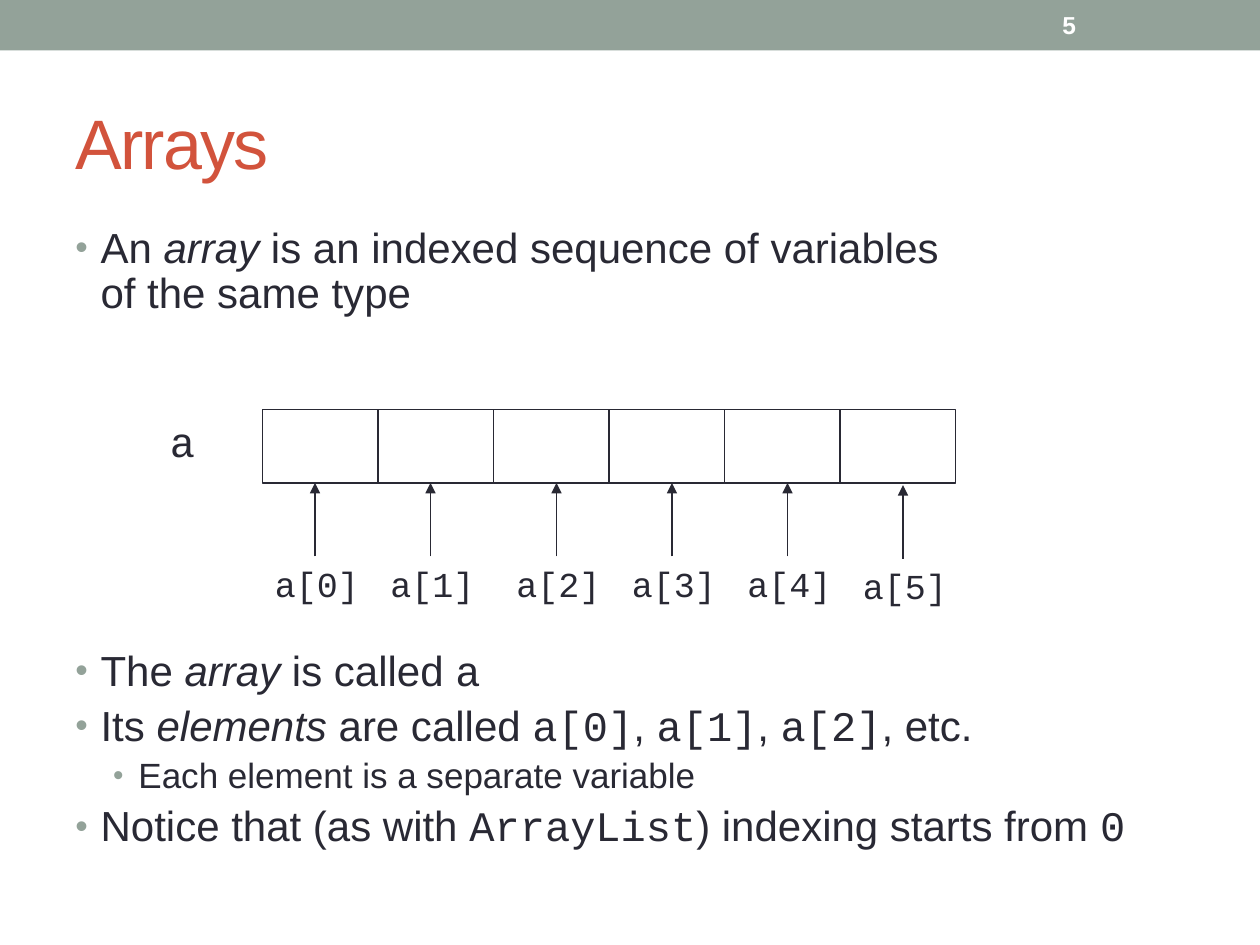
from pptx import Presentation, util as u
from pptx.dml.color import RGBColor
from pptx.enum import shapes, text
from pptx.oxml import parse_xml
from pptx.oxml.ns import nsdecls, qn
from lxml import etree

SANS, MONO = "Arial", "Courier New"
INK, SAGE, RUST, WHITE = "292934", "93A299", "D2533C", "FFFFFF"


def color(code):
    return RGBColor.from_string(code)


def grid(*cells):
    """Lengths in grid units: the slide is 120 columns by 90 rows."""
    return [u.Inches(c / 12) for c in cells]


class Deck:
    def __init__(self):
        self.prs = Presentation()
        self.prs.slide_width, self.prs.slide_height = grid(120, 90)
        self.slide = self.prs.slides.add_slide(self.prs.slide_layouts[6])

    def font(self, run, size, face=SANS, ink=INK, bold=False, slant=False):
        f = run.font
        f.size, f.name, f.bold, f.italic = u.Pt(size), face, bold, slant
        f.color.rgb = color(ink)

    def box(self, at, fill=None, line=None):
        kind = shapes.MSO_SHAPE.RECTANGLE
        shape = self.slide.shapes.add_shape(kind, *grid(*at))
        shape.shadow.inherit = False
        if fill:
            shape.fill.solid()
            shape.fill.fore_color.rgb = color(fill)
        else:
            shape.fill.background()
        if line:
            shape.line.color.rgb = color(line)
            shape.line.width = u.Pt(0.75)
        else:
            shape.line.fill.background()

    def frame(self, at, middle=False):
        tf = self.slide.shapes.add_textbox(*grid(*at)).text_frame
        tf.word_wrap = True
        if middle:
            tf.vertical_anchor = text.MSO_ANCHOR.MIDDLE
        return tf

    def label(self, at, words, size, middle=False, **style):
        tf = self.frame(at, middle)
        tf.text = words
        run = tf.paragraphs[0].runs[0]
        self.font(run, size, **style)
        return run

    def arrow(self, x, low, high):
        line = self.slide.shapes.add_connector(
            shapes.MSO_CONNECTOR.STRAIGHT, *grid(x, low, x, high))
        line.line.color.rgb = color(INK)
        line.line.width = u.Pt(0.75)
        etree.SubElement(line.line._get_or_add_ln(), qn("a:tailEnd"),
                         type="triangle")
        etree.SubElement(line._element.spPr, qn("a:effectLst"))

    def bullet(self, para, level):
        props = para._p.get_or_add_pPr()
        props.set("marL", str(u.Inches(0.5 if level else 0.2)))
        props.set("indent", str(u.Inches(-0.2)))
        ns = nsdecls("a")
        for part in (f'<a:buClr {ns}><a:srgbClr val="{SAGE}"/></a:buClr>',
                     f'<a:buSzPct {ns} val="85000"/>',
                     f'<a:buFont {ns} typeface="{SANS}"/>',
                     f'<a:buChar {ns} char="•"/>'):
            props.append(parse_xml(part))

    def items(self, at, rows):
        """Each row: level, gap before, text; | splits, * slants, ` is code."""
        tf = self.frame(at)
        for n, (level, gap, words) in enumerate(rows):
            para = tf.add_paragraph() if n else tf.paragraphs[0]
            para.level = level
            para.line_spacing = 0.9
            para.space_before = u.Pt(gap)
            self.bullet(para, level)
            for part in words.split("|"):
                if part == "\n":
                    para.add_line_break()
                    continue
                run = para.add_run()
                run.text = part.lstrip("*`")
                self.font(run, 20 if level else 24,
                          MONO if part[0] == "`" else SANS,
                          slant=part[0] == "*")


def main():
    deck = Deck()

    # Top band and page number
    deck.box((0, 0, 120, 4.8), fill=SAGE)
    deck.label((100, 0.25, 14, 4.3), "5", 14, True, ink=WHITE, bold=True)

    # Title, set slightly tight
    title = deck.label((6, 7, 108, 13), "Arrays", 40, True, ink=RUST)
    title._r.get_or_add_rPr().set("spc", "-100")

    # Bullets, with a wide gap that leaves room for the diagram
    deck.items((6, 21, 111.5, 64), [
        (0, 0, "An |*array| is an indexed sequence of variables |\n|"
               "of the same type"),
        (0, 190, "The |*array| is called |`a"),
        (0, 5.5, "Its |*elements| are called |`a[0]|, |`a[1]|, |`a[2]|, etc."),
        (1, 4.6, "Each element is a separate variable"),
        (0, 5.5, "Notice that (as with |`ArrayList|) indexing starts from |`0"),
    ])

    # Array cells with an arrow and an index below each
    deck.label((15, 39, 9, 6), "a", 24, face=MONO)
    wide, high, count = 11, 7, 6
    for n in range(count):
        deck.box((25 + n * wide, 39, wide, high), line=INK)
        left = 25 + n * wide + (n > 1)
        drop = 0.2 if n == count - 1 else 0
        deck.arrow(left + 5, 53 + drop, 46 + drop)
        deck.label((left, 53 + drop, wide, 5.2), f"a[{n}]", 20, face=MONO)

    deck.prs.save("out.pptx")


if __name__ == "__main__":
    main()
